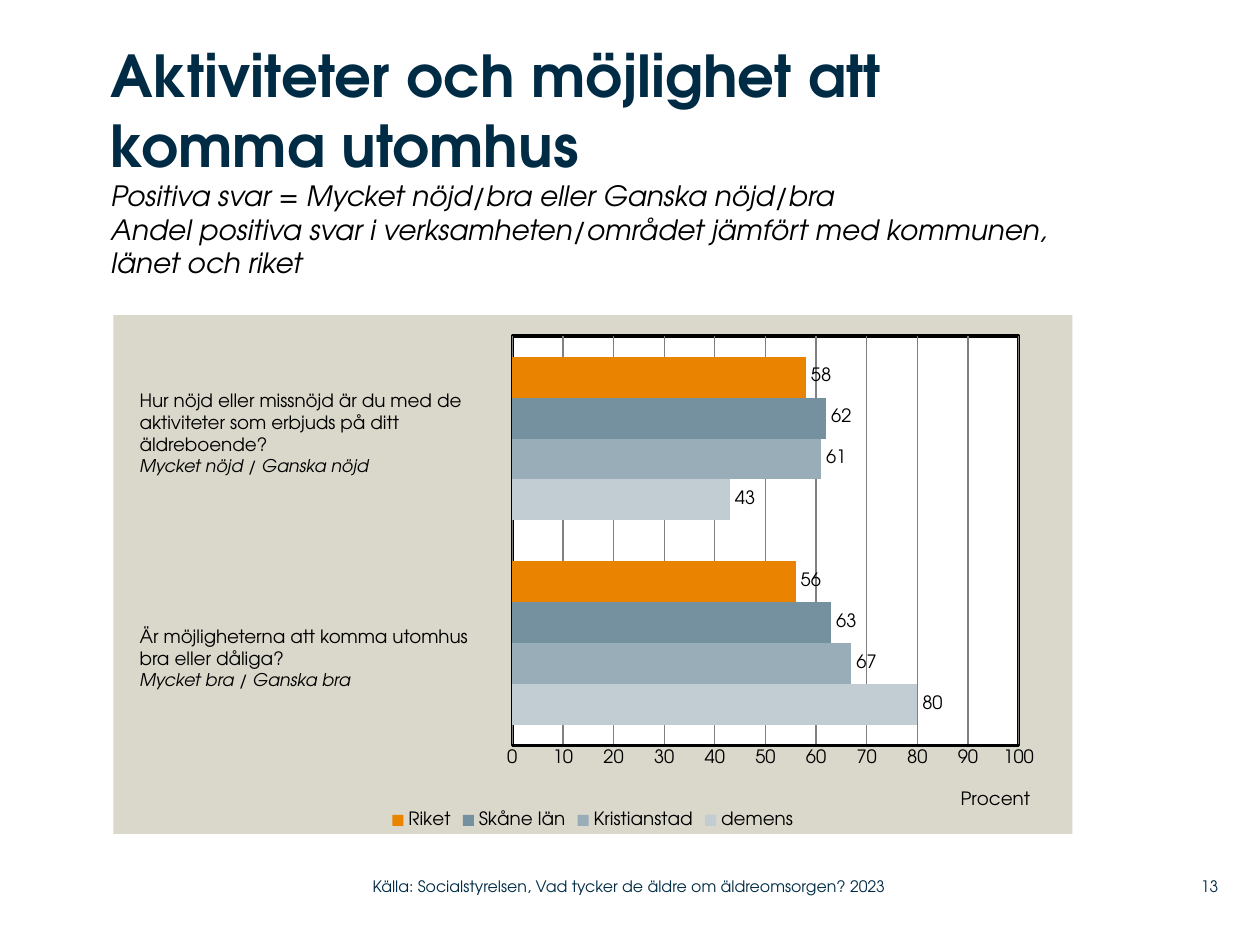
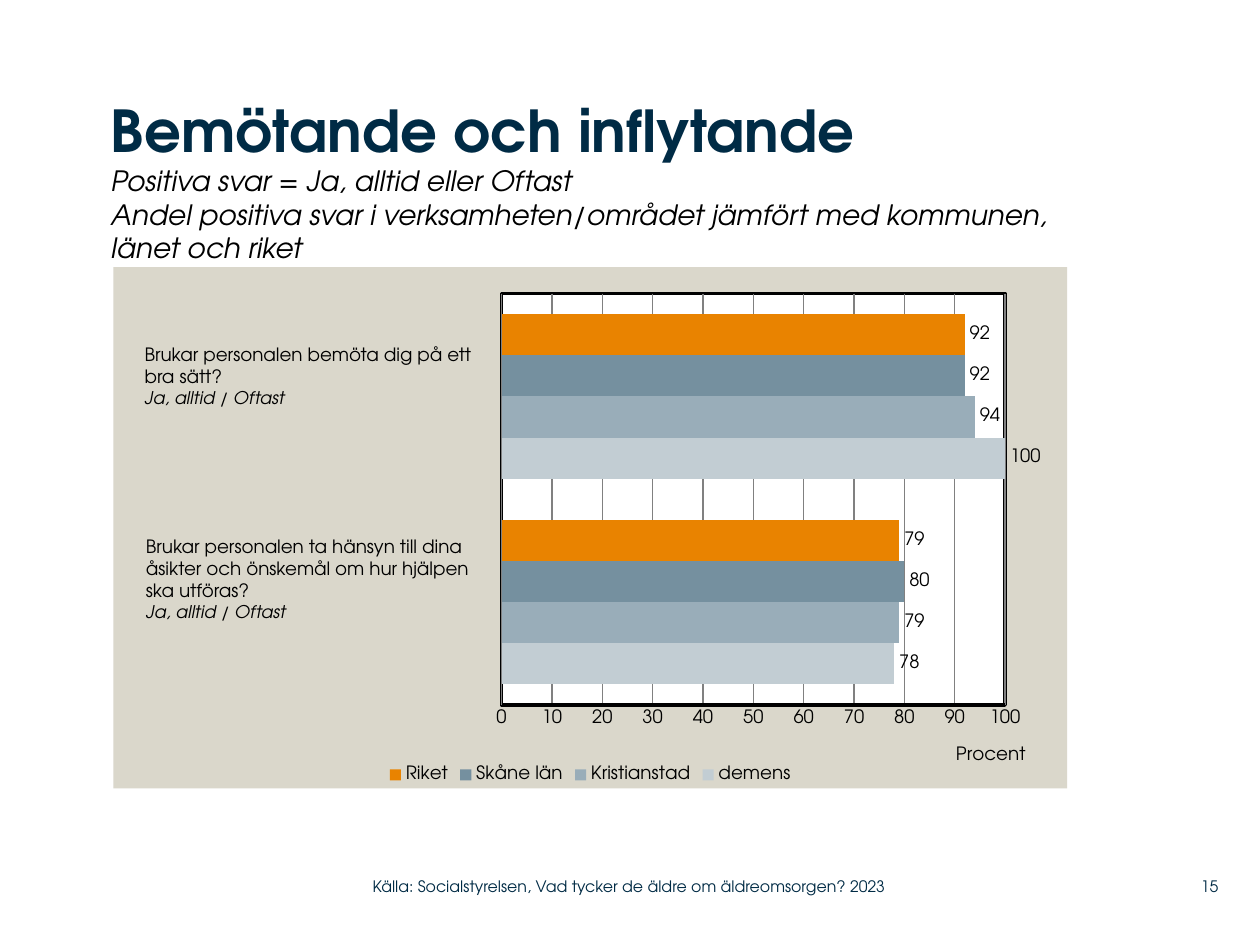
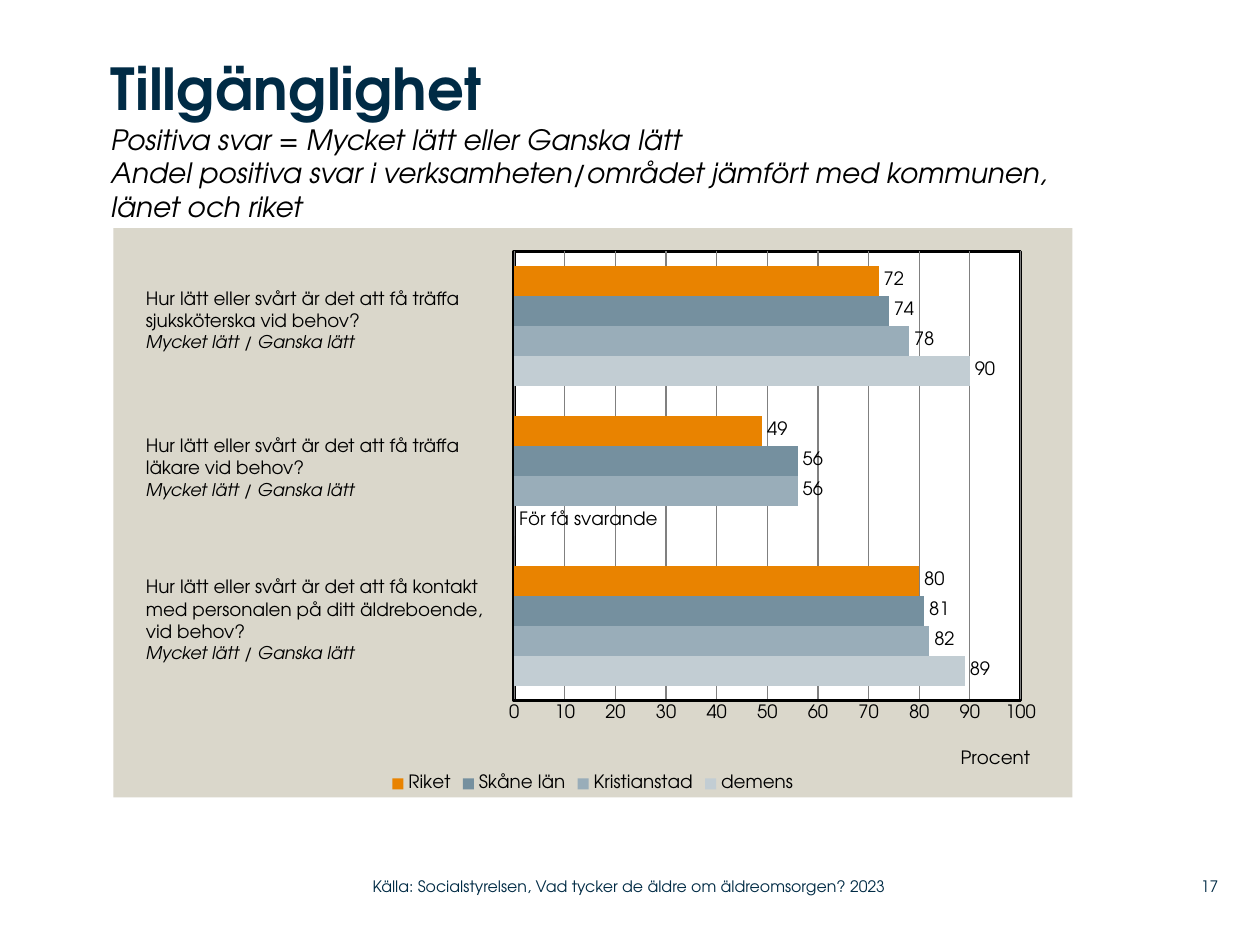
from lxml import etree
from pptx import Presentation
from pptx import util as u
from pptx.chart.data import CategoryChartData
from pptx.dml.color import RGBColor
from pptx.enum import chart as charts, text
from pptx.oxml import ns

FONT = "TeX Gyre Adventor"
NAVY = RGBColor(0x00, 0x2B, 0x45)
BLACK = RGBColor(0x00, 0x00, 0x00)
GRID_GREY = RGBColor(0x80, 0x80, 0x80)
PANEL = RGBColor(0xDA, 0xD7, 0xCB)
WHITE = RGBColor(0xFF, 0xFF, 0xFF)
SERIES_COLOURS = {
    "demens": RGBColor(0xC2, 0xCD, 0xD3),
    "Kristianstad": RGBColor(0x99, 0xAD, 0xB9),
    "Skåne län": RGBColor(0x75, 0x90, 0x9F),
    "Riket": RGBColor(0xE9, 0x83, 0x00),
}
BODY_SIZE = 10.5
SOURCE = "Källa: Socialstyrelsen, Vad tycker de äldre om äldreomsorgen? 2023"
COMPARISON = "Andel positiva svar i verksamheten/området jämfört med kommunen, länet och riket"
TOO_FEW = "För få svarande"

SLIDES = [
    {
        "number": "13",
        "title_box": (63.4, 23, 561.6, 136),
        "title": "Aktiviteter och möjlighet att komma utomhus",
        "answers": "Mycket nöjd/bra eller Ganska nöjd/bra",
        "chart_box": (64.8, 180, 548, 296.6),
        "plot": (0.416, 0.041, 0.528, 0.789),
        "values": [(80, 43), (67, 61), (63, 62), (56, 58)],
        "questions": [
            ((72.7, 218.9, 216, 70.6),
             "Hur nöjd eller missnöjd är du med de aktiviteter som erbjuds på ditt äldreboende?",
             "Mycket nöjd / Ganska nöjd"),
            ((72.7, 353.5, 216.7, 58.3),
             "Är möjligheterna att komma utomhus bra eller dåliga?",
             "Mycket bra / Ganska bra"),
        ],
    },
    {
        "number": "15",
        "title_box": (63.4, 54, 578.9, 86.4),
        "title": "Bemötande och inflytande",
        "answers": "Ja, alltid eller Oftast",
        "chart_box": (64.8, 152.6, 545, 298),
        "plot": (0.407, 0.051, 0.528, 0.789),
        "values": [(78, 100), (79, 94), (80, 92), (79, 92)],
        "questions": [
            ((75.6, 192.5, 213.8, 58.3),
             "Brukar personalen bemöta dig på ett bra sätt?",
             "Ja, alltid / Oftast"),
            ((76.3, 302.4, 216.7, 70.6),
             "Brukar personalen ta hänsyn till dina åsikter och önskemål om hur hjälpen ska utföras?",
             "Ja, alltid / Oftast"),
        ],
    },
    {
        "number": "17",
        "title_box": (63.4, 30.2, 559.4, 100),
        "title": "Tillgänglighet",
        "answers": "Mycket lätt eller Ganska lätt",
        "chart_box": (64.8, 130.3, 548, 325.4),
        "plot": (0.418, 0.041, 0.528, 0.789),
        "values": [(89, 0, 90), (82, 56, 78), (81, 56, 74), (80, 49, 72)],
        "questions": [
            ((76.3, 160.6, 215.3, 58.3),
             "Hur lätt eller svårt är det att få träffa sjuksköterska vid behov?",
             "Mycket lätt / Ganska lätt"),
            ((76.3, 244.8, 211, 58.3),
             "Hur lätt eller svårt är det att få träffa läkare vid behov?",
             "Mycket lätt / Ganska lätt"),
            ((76.3, 325.4, 216.7, 70.6),
             "Hur lätt eller svårt är det att få kontakt med personalen på ditt äldreboende, vid behov?",
             "Mycket lätt / Ganska lätt"),
        ],
    },
]


def points(box):
    """Turn a box of numbers into lengths in points."""
    return [u.Pt(length) for length in box]


def style_font(font, size, colour=BLACK, bold=False, italic=False):
    """Set the shared typeface with the given look."""
    font.name = FONT
    font.size = u.Pt(size)
    font.color.rgb = colour
    font.bold = bold
    font.italic = italic


def clear_margins(frame):
    """Remove the inner margins of a text frame."""
    frame.margin_left = frame.margin_right = frame.margin_top = frame.margin_bottom = 0


def add_title(slide, box, heading, answers):
    """Fill the title placeholder with a heading and two explanatory lines."""
    title = slide.shapes.title
    title.left, title.top, title.width, title.height = points(box)
    frame = title.text_frame
    clear_margins(frame)
    frame.word_wrap = True
    frame.auto_size = text.MSO_AUTO_SIZE.NONE
    frame.vertical_anchor = text.MSO_ANCHOR.TOP
    paragraph = frame.paragraphs[0]
    paragraph.alignment = text.PP_ALIGN.LEFT
    run = paragraph.add_run()
    run.text = heading
    style_font(run.font, 33, NAVY, bold=True)
    for line in (f"Positiva svar = {answers}", COMPARISON):
        paragraph.add_line_break()
        run = paragraph.add_run()
        run.text = line
        style_font(run.font, 16, italic=True)


def add_question(slide, box, question, answers):
    """Place a survey question with its counted answers in italics."""
    frame = slide.shapes.add_textbox(*points(box)).text_frame
    frame.word_wrap = True
    frame.text = question
    style_font(frame.paragraphs[0].font, BODY_SIZE)
    paragraph = frame.add_paragraph()
    paragraph.text = answers
    style_font(paragraph.font, 10, italic=True)


def add_footer_text(slide, box, words, alignment):
    """Place one footer text, centred vertically in its box."""
    frame = slide.shapes.add_textbox(*points(box)).text_frame
    clear_margins(frame)
    frame.word_wrap = True
    frame.vertical_anchor = text.MSO_ANCHOR.MIDDLE
    frame.text = words
    paragraph = frame.paragraphs[0]
    paragraph.alignment = alignment
    style_font(paragraph.font, 9, NAVY)


def add_footer(slide, number):
    """Place the source line and the page number."""
    add_footer_text(slide, (213, 496, 319, 21), SOURCE, text.PP_ALIGN.LEFT)
    add_footer_text(slide, (662.4, 496, 33.8, 21), number, text.PP_ALIGN.RIGHT)


def area_properties(fill, border):
    """Build the fill and outline element of a chart area."""
    return etree.fromstring(
        f'<c:spPr {ns.nsdecls("c", "a")}>'
        f'<a:solidFill><a:srgbClr val="{fill}"/></a:solidFill>{border}</c:spPr>')


def set_layout(parent, index, inner="", **fractions):
    """Give a chart part a manual layout in fractions of the chart."""
    for old in parent.findall(ns.qn("c:layout")):
        parent.remove(old)
    sizes = "".join(f'<c:{name} val="{value}"/>' for name, value in fractions.items())
    parent.insert(index, etree.fromstring(
        f'<c:layout {ns.nsdecls("c")}><c:manualLayout>{inner}'
        f'<c:xMode val="edge"/><c:yMode val="edge"/>{sizes}'
        '</c:manualLayout></c:layout>'))


def style_areas(chart, plot_box):
    """Colour the chart panel and place the framed white plot."""
    chart_space = chart._chartSpace
    chart_space.find(ns.qn("c:txPr")).addprevious(
        area_properties(PANEL, "<a:ln><a:noFill/></a:ln>"))
    plot_area = chart_space.find(f'.//{ns.qn("c:plotArea")}')
    x, y, width, height = plot_box
    set_layout(plot_area, 0, '<c:layoutTarget val="inner"/>', x=x, y=y, w=width, h=height)
    border = (f'<a:ln w="{u.Pt(2)}"><a:solidFill><a:srgbClr val="{BLACK}"/>'
              '</a:solidFill></a:ln>')
    plot_area.append(area_properties(WHITE, border))


def style_axes(chart):
    """Hide the categories and set up the percentage axis."""
    chart.category_axis.visible = False
    axis = chart.value_axis
    axis.minimum_scale, axis.maximum_scale, axis.major_unit = 0, 100, 10
    axis.major_tick_mark = axis.minor_tick_mark = charts.XL_TICK_MARK.NONE
    axis.format.line.color.rgb = BLACK
    axis.format.line.width = u.Pt(2)
    axis.has_major_gridlines = True
    gridline = axis.major_gridlines.format.line
    gridline.color.rgb = GRID_GREY
    gridline.width = u.Pt(0.75)
    frame = axis.axis_title.text_frame
    frame.text = "Procent"
    style_font(frame.paragraphs[0].runs[0].font, BODY_SIZE)
    set_layout(axis.axis_title._element, 1, x=0.88, y=0.91)


def style_series(series):
    """Colour a series, label its bars and mark missing answers."""
    series.invert_if_negative = False
    series.format.fill.solid()
    series.format.fill.fore_color.rgb = SERIES_COLOURS[series.name]
    labels = series.data_labels
    labels.show_value = True
    labels.position = charts.XL_LABEL_POSITION.OUTSIDE_END
    style_font(labels.font, BODY_SIZE)
    for index, value in enumerate(series.values):
        if value == 0:
            label = series.points[index].data_label
            label.text_frame.text = TOO_FEW
            style_font(label.text_frame.paragraphs[0].runs[0].font, BODY_SIZE)
            label.position = charts.XL_LABEL_POSITION.OUTSIDE_END


def add_survey_chart(slide, box, plot_box, values):
    """Add the bar chart that compares the unit with larger areas."""
    data = CategoryChartData()
    data.categories = [str(index + 1) for index in range(len(values[0]))]
    for name, shares in zip(SERIES_COLOURS, values):
        data.add_series(name, shares)
    chart = slide.shapes.add_chart(
        charts.XL_CHART_TYPE.BAR_CLUSTERED, *points(box), data).chart
    chart.has_title = False
    style_font(chart.font, BODY_SIZE)
    chart.has_legend = True
    chart.legend.position = charts.XL_LEGEND_POSITION.BOTTOM
    chart.legend.include_in_layout = False
    style_font(chart.legend.font, BODY_SIZE)
    plot = chart.plots[0]
    plot.gap_width = 100
    plot.vary_by_categories = False
    for series in plot.series:
        style_series(series)
    style_axes(chart)
    style_areas(chart, plot_box)


def add_survey_slide(presentation, content):
    """Build one survey slide from its content."""
    slide = presentation.slides.add_slide(presentation.slide_layouts[5])
    add_survey_chart(slide, content["chart_box"], content["plot"], content["values"])
    add_title(slide, content["title_box"], content["title"], content["answers"])
    for box, question, answers in content["questions"]:
        add_question(slide, box, question, answers)
    add_footer(slide, content["number"])


def main():
    """Build and save the presentation."""
    presentation = Presentation()
    presentation.slide_width, presentation.slide_height = u.Pt(720), u.Pt(540)
    for content in SLIDES:
        add_survey_slide(presentation, content)
    presentation.save("out.pptx")


if __name__ == "__main__":
    main()
